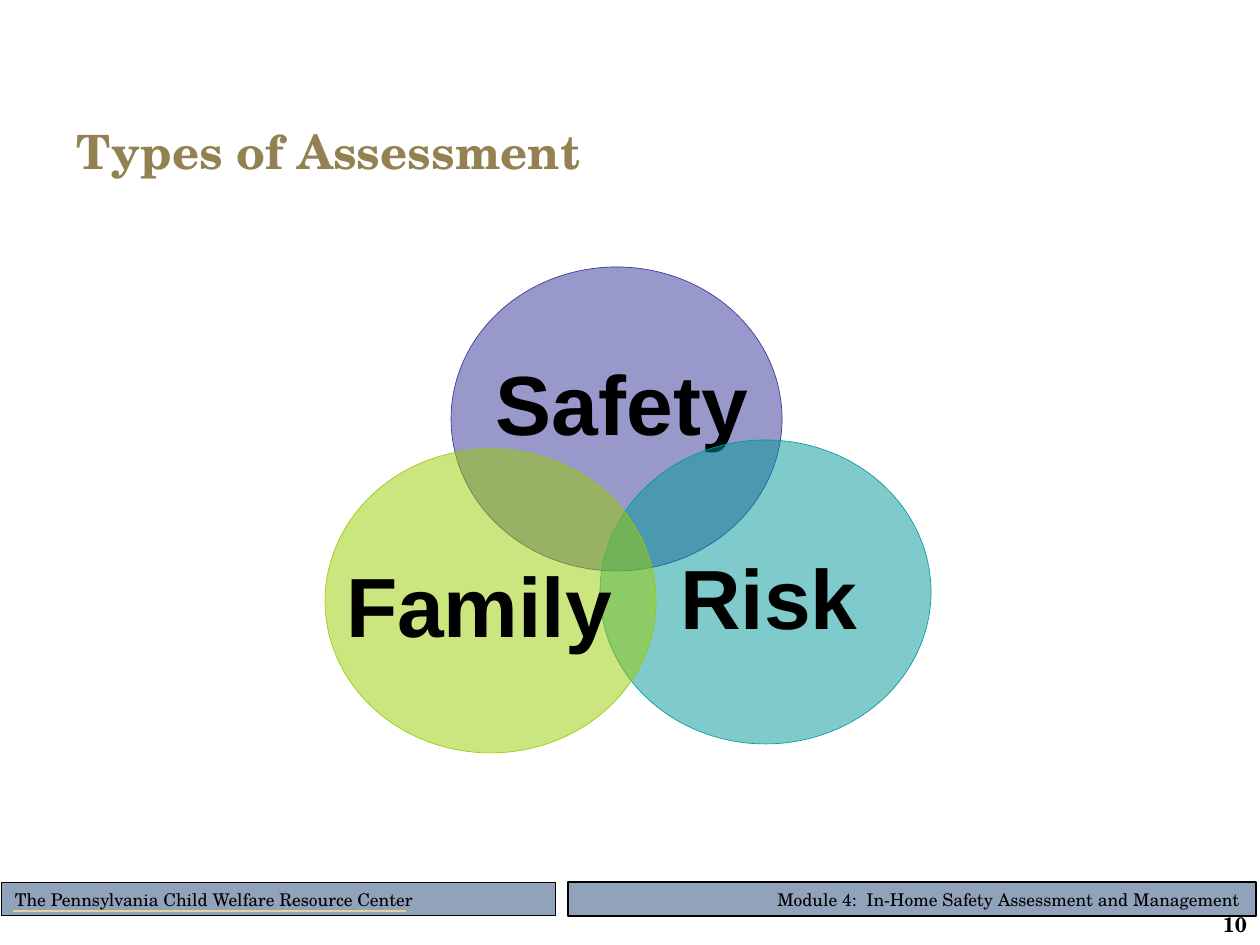
"""Build the slide on the three overlapping types of assessment."""
from dataclasses import dataclass

import lxml.etree
import pptx
import pptx.dml.color
import pptx.enum.shapes
import pptx.enum.text
import pptx.oxml.ns
import pptx.util

RGBColor = pptx.dml.color.RGBColor
Align = pptx.enum.text.PP_ALIGN
Anchor = pptx.enum.text.MSO_ANCHOR
Preset = pptx.enum.shapes.MSO_SHAPE

BLACK = RGBColor(0x00, 0x00, 0x00)
BRONZE = RGBColor(0x94, 0x81, 0x51)
SAND = RGBColor(0xE5, 0xD1, 0x99)
SLATE = RGBColor(0x91, 0xA3, 0xBB)
INDIGO = RGBColor(0x33, 0x33, 0x99)
TEAL = RGBColor(0x00, 0x99, 0x99)
LIME = RGBColor(0x99, 0xCC, 0x00)

SERIF = "TeX Gyre Schola"
SANS = "Arial"
PX_PER_INCH = 126
CIRCLE_SIZE = (331, 304)


@dataclass(frozen=True)
class Box:
    left: int
    top: int
    width: int
    height: int

    def emu(self) -> tuple:
        return tuple(px(n) for n in (self.left, self.top, self.width, self.height))


@dataclass(frozen=True)
class TextStyle:
    font: str
    size: int
    bold: bool = False
    color: RGBColor = BLACK
    align: Align = Align.LEFT
    inset_x: int = 13
    inset_y: int = 6


@dataclass(frozen=True)
class Assessment:
    name: str
    circle: Box
    label: Box
    color: RGBColor


@dataclass(frozen=True)
class FooterBar:
    text: str
    box: Box
    outline: float
    style: TextStyle


TITLE_STYLE = TextStyle(SERIF, 27, True, BRONZE)
LABEL_STYLE = TextStyle(SANS, 48, True, align=Align.CENTER, inset_x=0, inset_y=0)
NUMBER_STYLE = TextStyle(SERIF, 12, True, align=Align.RIGHT)

ASSESSMENTS = (
    Assessment("Safety", Box(451, 267, *CIRCLE_SIZE), Box(454, 349, 336, 105), INDIGO),
    Assessment("Risk", Box(600, 440, *CIRCLE_SIZE), Box(653, 561, 232, 69), TEAL),
    Assessment("Family", Box(325, 449, *CIRCLE_SIZE), Box(338, 553, 282, 102), LIME),
)
FOOTER_BARS = (
    FooterBar("Module 4:  In-Home Safety Assessment and Management",
              Box(568, 882, 688, 34), 0.75,
              TextStyle(SERIF, 10, align=Align.RIGHT, inset_x=17)),
    FooterBar("The Pennsylvania Child Welfare Resource Center",
              Box(2, 882, 554, 34), 0.5, TextStyle(SERIF, 10)),
)


def px(length: int) -> int:
    return round(length * 914400 / PX_PER_INCH)


def write(shape, text: str, style: TextStyle) -> None:
    frame = shape.text_frame
    frame.text = text
    frame_format = {
        "word_wrap": True, "vertical_anchor": Anchor.MIDDLE,
        "margin_left": px(style.inset_x), "margin_right": px(style.inset_x),
        "margin_top": px(style.inset_y), "margin_bottom": px(style.inset_y),
    }
    paragraph = frame.paragraphs[0]
    paragraph.alignment = style.align
    font = paragraph.runs[0].font
    font_format = {"name": style.font, "size": pptx.util.Pt(style.size), "bold": style.bold}
    for target, values in ((frame, frame_format), (font, font_format)):
        for attribute, value in values.items():
            setattr(target, attribute, value)
    font.color.rgb = style.color


def add_text(slide, text: str, box: Box, style: TextStyle) -> None:
    write(slide.shapes.add_textbox(*box.emu()), text, style)


def add_outlined(slide, preset: Preset, box: Box, fill: RGBColor,
                 outline: RGBColor, weight: float):
    shape = slide.shapes.add_shape(preset, *box.emu())
    shape.shadow.inherit = False
    shape.fill.solid()
    shape.fill.fore_color.rgb = fill
    shape.line.color.rgb = outline
    shape.line.width = pptx.util.Pt(weight)
    return shape


def add_footer_bar(slide, bar: FooterBar) -> None:
    rectangle = add_outlined(slide, Preset.RECTANGLE, bar.box, SLATE, BLACK, bar.outline)
    write(rectangle, bar.text, bar.style)


def add_underline(slide, left: int, right: int, y: int) -> None:
    underline = slide.shapes.add_connector(
        pptx.enum.shapes.MSO_CONNECTOR.STRAIGHT, px(left), px(y), px(right), px(y))
    underline.line.color.rgb = SAND
    underline.line.width = pptx.util.Pt(0.75)
    lxml.etree.SubElement(underline._element.spPr, pptx.oxml.ns.qn("a:effectLst"))


def add_assessment(slide, assessment: Assessment) -> None:
    color = assessment.color
    circle = add_outlined(slide, Preset.OVAL, assessment.circle, color, color, 0.37)
    fill_color = circle._element.spPr.find(
        f"{pptx.oxml.ns.qn('a:solidFill')}/{pptx.oxml.ns.qn('a:srgbClr')}")
    lxml.etree.SubElement(fill_color, pptx.oxml.ns.qn("a:alpha"), val="50000")
    add_text(slide, assessment.name, assessment.label, LABEL_STYLE)


def set_title(slide, text: str, box: Box) -> None:
    title = slide.shapes.title
    for side, length in zip(("left", "top", "width", "height"), box.emu()):
        setattr(title, side, length)
    write(title, text, TITLE_STYLE)


def main() -> None:
    presentation = pptx.Presentation()
    presentation.slide_width = px(1260)
    presentation.slide_height = px(945)
    slide = presentation.slides.add_slide(presentation.slide_layouts[5])
    for bar in FOOTER_BARS:
        add_footer_bar(slide, bar)
    add_underline(slide, 13, 406, 911)
    for assessment in ASSESSMENTS:
        add_assessment(slide, assessment)
    set_title(slide, "Types of Assessment", Box(64, 110, 1134, 82))
    add_text(slide, "10", Box(1120, 912, 140, 25), NUMBER_STYLE)
    presentation.save("out.pptx")


if __name__ == "__main__":
    main()
